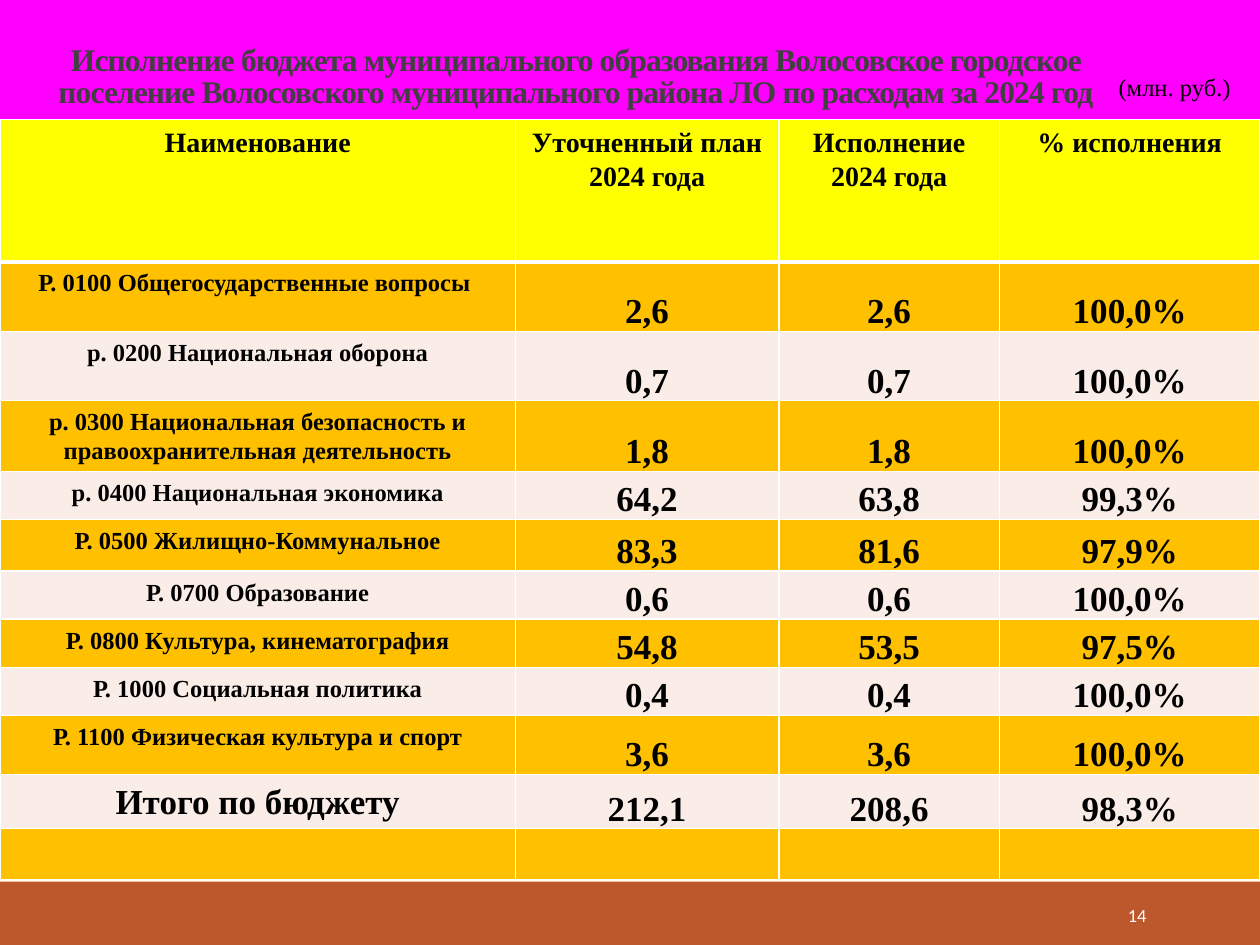
from copy import deepcopy

from lxml.etree import SubElement
from pptx import Presentation
from pptx.dml.color import RGBColor
from pptx.enum.shapes import MSO_SHAPE as Shape
from pptx.enum.text import MSO_ANCHOR as Anchor, MSO_AUTO_SIZE as AutoSize, PP_ALIGN as Align
from pptx.oxml.ns import qn
from pptx.util import Cm, Pt

SERIF = "Times New Roman"


def rgb(color):
    return RGBColor.from_string(color)


def write(frame, text, size, color="000000", bold=False, align=Align.CENTER,
          spacing=None, font=SERIF):
    frame.text = text
    frame.word_wrap = True
    for paragraph in frame.paragraphs:
        paragraph.alignment = align
        paragraph.line_spacing = spacing
        paragraph.font.name = font
        paragraph.font.size = Pt(size)
        paragraph.font.bold = bold
        paragraph.font.color.rgb = rgb(color)


prs = Presentation()
prs.slide_width, prs.slide_height = Cm(25.4), Cm(19.05)
slide = prs.slides.add_slide(prs.slide_layouts[5])

# Background gradient, top to bottom
background = slide.background.fill
background.gradient()
background.gradient_angle = 270
stop_list = next(slide.element.iter(qn("a:gsLst")))
for stop in list(stop_list):
    stop_list.append(deepcopy(stop))
gradient = [(0.55, "FF00FF"), (0.74, "F6C791"), (0.83, "F6C791"), (1, "F9DAB6")]
for stop, (position, color) in zip(background.gradient_stops, gradient):
    stop.position = position
    stop.color.rgb = rgb(color)

# Footer band
footer = slide.shapes.add_shape(Shape.RECTANGLE, 0, Cm(17.78), Cm(25.4), Cm(1.27))
footer.shadow.inherit = False
footer.fill.solid()
footer.fill.fore_color.rgb = rgb("BD582C")
footer.line.fill.background()

# Title
title = slide.shapes.title
title.left, title.top, title.width, title.height = Cm(0.18), Cm(0.33), Cm(22.86), Cm(2.01)
write(title.text_frame,
      "Исполнение бюджета муниципального образования Волосовское городское "
      "поселение Волосовского муниципального района ЛО по расходам за 2024 год",
      18, "404040", bold=True, spacing=0.85)
title.text_frame.auto_size = AutoSize.NONE
title.text_frame.vertical_anchor = Anchor.BOTTOM
title.text_frame.paragraphs[0].runs[0].font._element.set("spc", "-50")

# Budget table: row height in cm, then the cell texts
budget = [
    (2.87, "Наименование", "Уточненный план\n2024 года", "Исполнение\n2024 года", "% исполнения"),
    (1.4, "Р. 0100 Общегосударственные вопросы ", "2,6", "2,6", "100,0%"),
    (1.4, "р. 0200 Национальная оборона", "0,7", "0,7", "100,0%"),
    (1.37, "р. 0300 Национальная безопасность и правоохранительная деятельность",
     "1,8", "1,8", "100,0%"),
    (0.97, "р. 0400 Национальная экономика", "64,2", "63,8", "99,3%"),
    (1.04, "Р. 0500 Жилищно-Коммунальное", "83,3", "81,6", "97,9%"),
    (0.97, "Р. 0700 Образование", "0,6", "0,6", "100,0%"),
    (0.97, "Р. 0800 Культура, кинематография", "54,8", "53,5", "97,5%"),
    (0.97, "Р. 1000 Социальная политика", "0,4", "0,4", "100,0%"),
    (1.19, "Р. 1100 Физическая культура и спорт", "3,6", "3,6", "100,0%"),
    (1.07, "Итого по бюджету", "212,1", "208,6", "98,3%"),
    (1.04, "", "", "", ""),
]
total_row = len(budget) - 2
table = slide.shapes.add_table(len(budget), 4, 0, Cm(2.41), Cm(25.4), Cm(15.3)).table
for column, width in zip(table.columns, [10.39, 5.31, 4.45, 5.25]):
    column.width = Cm(width)

for r, (height, *texts) in enumerate(budget):
    table.rows[r].height = Cm(height)
    for c, text in enumerate(texts):
        cell = table.cell(r, c)
        if r == 0:
            size, color = 16, "FFFF00"
        else:
            size = 14 if c == 0 and r < total_row else 20
            color = "FFC000" if r % 2 else "FAEDE7"
        if text:
            write(cell.text_frame, text, size, bold=True, spacing=1.07)
        # Figures sit on the bottom edge
        if 0 < r <= total_row and c > 0:
            cell.vertical_anchor = Anchor.BOTTOM
            cell.margin_left = cell.margin_right = cell.margin_top = Cm(0.02)
            cell.margin_bottom = 0
        # White borders, thicker under the header
        properties = cell._tc.get_or_add_tcPr()
        for side in "LRTB":
            thick = (r, side) in [(0, "B"), (1, "T")]
            border = SubElement(properties, qn(f"a:ln{side}"), w=str(Pt(3 if thick else 1)))
            SubElement(SubElement(border, qn("a:solidFill")), qn("a:srgbClr"), val="FFFFFF")
        cell.fill.solid()
        cell.fill.fore_color.rgb = rgb(color)

# Page number
page = slide.shapes.add_textbox(Cm(20.62), Cm(17.93), Cm(2.74), Cm(1.02)).text_frame
write(page, "14", 10.5, "FFFFFF", align=Align.RIGHT, font="Calibri")
page.vertical_anchor = Anchor.MIDDLE

# Unit of measure
unit = slide.shapes.add_textbox(Cm(22.3), Cm(1.32), Cm(2.79), Cm(0.86)).text_frame
write(unit, "(млн. руб.)", 14, align=Align.LEFT)

prs.save("out.pptx")
